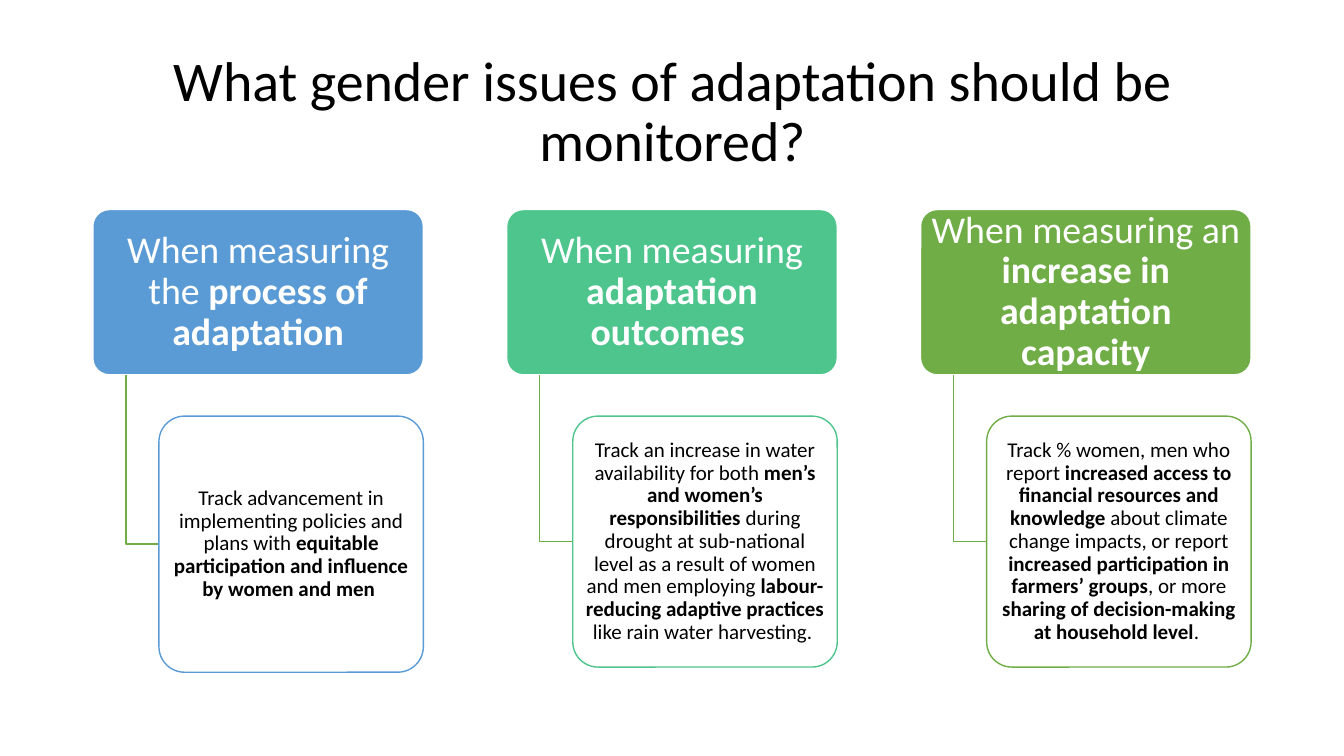
from pptx import Presentation
from pptx import util as u
from pptx.dml.color import RGBColor
from pptx.enum import shapes, text
from pptx.oxml.ns import qn
from lxml import etree

FONT = "Calibri"
BLACK, WHITE, GREEN = "000000", "FFFFFF", "70AD47"
COLUMN_TOP, COLUMN_WIDTH = 5.28, 8.33
FIRST_LEFT, PITCH = 2.34, 10.43

# Heading and card texts are lists of runs that alternate regular and bold
COLUMNS = [
    ("5B9BD5", 11.66,
     ["When measuring the ", "process of adaptation"],
     ["Track advancement in implementing policies and plans with ",
      "equitable participation and influence by women and men "]),
    ("4DC58D", 11.53,
     ["When measuring ", "adaptation outcomes "],
     ["Track an increase in water availability for both ",
      "men’s and women’s responsibilities ",
      "during drought at sub-national level as a result of women and men employing ",
      "labour-reducing adaptive practices ",
      "like rain water harvesting. "]),
    (GREEN, 11.53,
     ["When measuring an ", "increase in adaptation capacity"],
     ["Track % women, men who report ",
      "increased access to financial resources and knowledge ",
      "about climate change impacts, or report ",
      "increased participation in farmers’ groups",
      ", or more ",
      "sharing of decision-making at household level",
      ". "]),
]


def rgb(value):
    return RGBColor.from_string(value)


def write(sp, runs, size, color, inset_x, inset_y):
    """Centre one paragraph of alternating regular and bold runs."""
    tf = sp.text_frame
    tf.word_wrap = True
    tf.vertical_anchor = text.MSO_ANCHOR.MIDDLE
    tf.margin_left = tf.margin_right = u.Cm(inset_x)
    tf.margin_top = tf.margin_bottom = u.Cm(inset_y)
    p = tf.paragraphs[0]
    p.alignment = text.PP_ALIGN.CENTER
    p.line_spacing = 0.9
    for i, words in enumerate(runs):
        r = p.add_run()
        r.text = words
        r.font.name = FONT
        r.font.size = u.Pt(size)
        r.font.bold = i % 2 == 1
        r.font.color.rgb = rgb(color)


def add_box(s, left, top, width, height, fill, line):
    sp = s.shapes.add_shape(shapes.MSO_SHAPE.ROUNDED_RECTANGLE,
                            u.Cm(left), u.Cm(top), u.Cm(width), u.Cm(height))
    sp.adjustments[0] = 0.1
    sp.shadow.inherit = False
    sp.fill.solid()
    sp.fill.fore_color.rgb = rgb(fill)
    sp.line.color.rgb = rgb(line)
    sp.line.width = u.Pt(1)
    return sp


def add_elbow(s, left, top, right, bottom):
    fb = s.shapes.build_freeform(u.Cm(left), u.Cm(top))
    fb.add_line_segments([(u.Cm(left), u.Cm(bottom)),
                          (u.Cm(right), u.Cm(bottom))], close=False)
    sp = fb.convert_to_shape()
    sp.shadow.inherit = False
    sp.fill.background()
    sp.line.color.rgb = rgb(GREEN)
    sp.line.width = u.Pt(1)


def add_title(s, left, top, width, height):
    sp = s.shapes.add_textbox(u.Cm(left), u.Cm(top), u.Cm(width), u.Cm(height))
    write(sp, ["What gender issues of adaptation should be monitored?"],
          40, BLACK, 0.25, 0.13)


def add_column(s, left, top, width, height, color, heading, body):
    # Heading is half as high as wide; the card sits lower and indented
    heading_height = width / 2
    card_left = left + width / 5
    card_top = top + heading_height + width / 8
    card_height = top + height - card_top

    sp = add_box(s, left, top, width, heading_height, color, WHITE)
    write(sp, heading, 27, WHITE, 0.15, 0.1)

    # Elbow line from the heading to the middle of the card's left side
    add_elbow(s, left + width / 10, top + heading_height,
              card_left, card_top + card_height / 2)

    # Card, slightly see-through
    sp = add_box(s, card_left, card_top, width * 0.8, card_height, WHITE, color)
    fill = sp.fill._xPr.find(qn("a:solidFill"))
    etree.SubElement(fill[0], qn("a:alpha")).set("val", "90000")
    write(sp, body, 15, BLACK, 0.08, 0.05)


def main():
    prs = Presentation()
    prs.slide_width, prs.slide_height = u.Cm(33.87), u.Cm(19.05)
    s = prs.slides.add_slide(prs.slide_layouts[6])
    add_title(s, FIRST_LEFT, 1.02, 29.21, 3.68)
    for i, (color, height, heading, body) in enumerate(COLUMNS):
        add_column(s, FIRST_LEFT + i * PITCH, COLUMN_TOP, COLUMN_WIDTH, height,
                   color, heading, body)
    prs.save("out.pptx")


if __name__ == "__main__":
    main()
